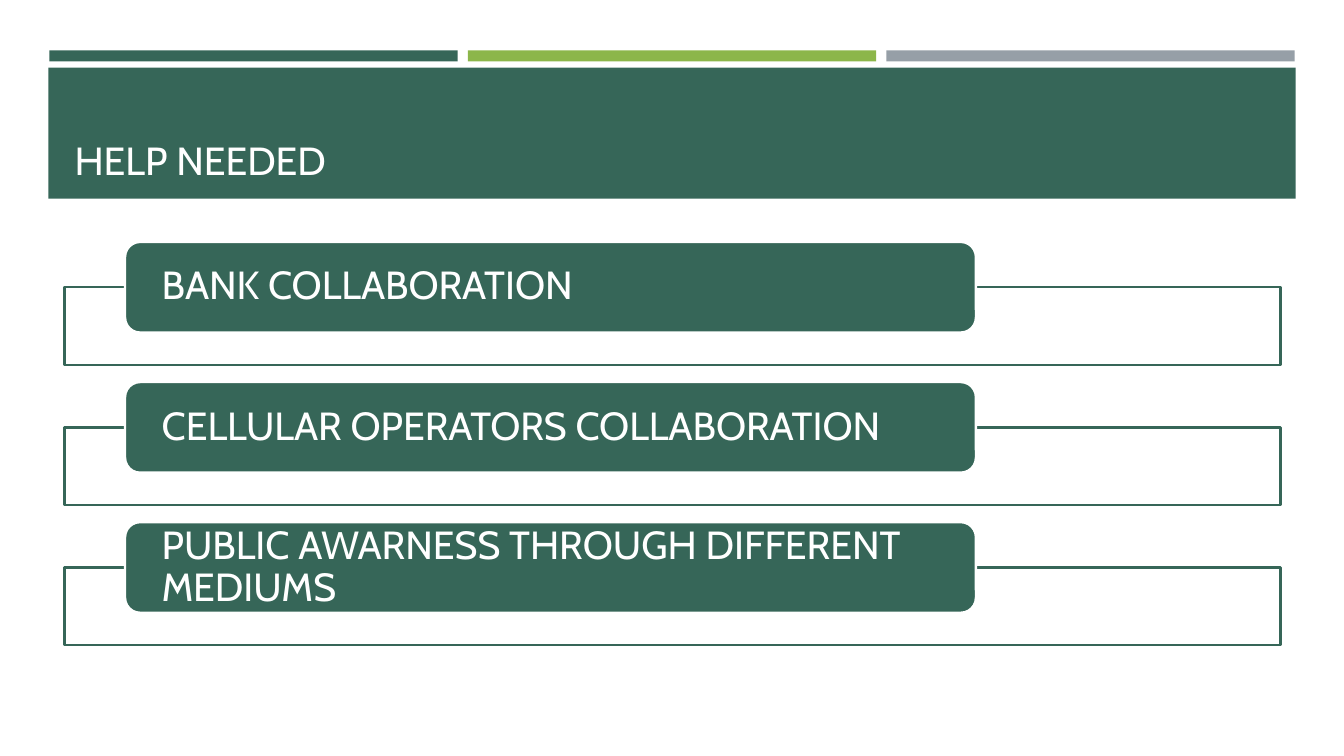
"""Build the "Help needed" slide: a title band above three framed labels."""
from pptx import Presentation
from pptx.dml.color import RGBColor
from pptx.enum.shapes import MSO_SHAPE
from pptx.enum.text import MSO_ANCHOR, PP_ALIGN
from pptx.util import Inches, Pt

RECT, ROUND = MSO_SHAPE.RECTANGLE, MSO_SHAPE.ROUNDED_RECTANGLE
MIDDLE, BOTTOM = MSO_ANCHOR.MIDDLE, MSO_ANCHOR.BOTTOM
LEFT = PP_ALIGN.LEFT
GREEN = RGBColor(0x36, 0x66, 0x58)
LIME = RGBColor(0x8C, 0xB6, 0x4A)
GREY = RGBColor(0x96, 0x9F, 0xA7)
WHITE = RGBColor(0xFF, 0xFF, 0xFF)

deck = Presentation()
deck.slide_width, deck.slide_height = Inches(13.33), Inches(7.5)
slide = deck.slides.add_slide(deck.slide_layouts[6])


def block(kind, x, y, w, h, fill, line=None):
    shape = slide.shapes.add_shape(kind, Inches(x), Inches(y), Inches(w), Inches(h))
    shape.shadow.inherit = False
    shape.fill.solid()
    shape.fill.fore_color.rgb = fill
    if line is None:
        shape.line.fill.background()
    else:
        shape.line.color.rgb = line
        shape.line.width = Pt(1.75)
    return shape


def write(shape, text, anchor=MIDDLE, side=0.36, foot=0, size=28, space=0.9):
    frame = shape.text_frame
    frame.word_wrap = True
    frame.vertical_anchor = anchor
    frame.margin_left = frame.margin_right = Inches(side)
    frame.margin_top, frame.margin_bottom = 0, Inches(foot)
    para = frame.paragraphs[0]
    para.text = text
    para.alignment = LEFT
    para.line_spacing = space
    para.font.name = "Cabin"
    para.font.size = Pt(size)
    para.font.color.rgb = WHITE


BAR, STEP = 4.05, 4.15
for col, color in enumerate((GREEN, LIME, GREY)):
    block(RECT, 0.49 + col * STEP, 0.5, BAR, 0.11, color)

band = block(RECT, 0.48, 0.67, 12.37, 1.3, GREEN)
write(band, "HELP NEEDED", anchor=BOTTOM, side=0.26, foot=0.14)

TOP, PITCH = 2.4, 1.39
needs = (
    "BANK COLLABORATION",
    "CELLULAR OPERATORS COLLABORATION",
    "PUBLIC AWARNESS THROUGH DIFFERENT MEDIUMS",
)
for row, need in enumerate(needs):
    y = TOP + row * PITCH
    block(RECT, 0.64, y + 0.45, 12.06, 0.77, WHITE, line=GREEN)
    label = block(ROUND, 1.24, y, 8.44, 0.9, GREEN, line=WHITE)
    write(label, need, side=0.32)

deck.save("out.pptx")
